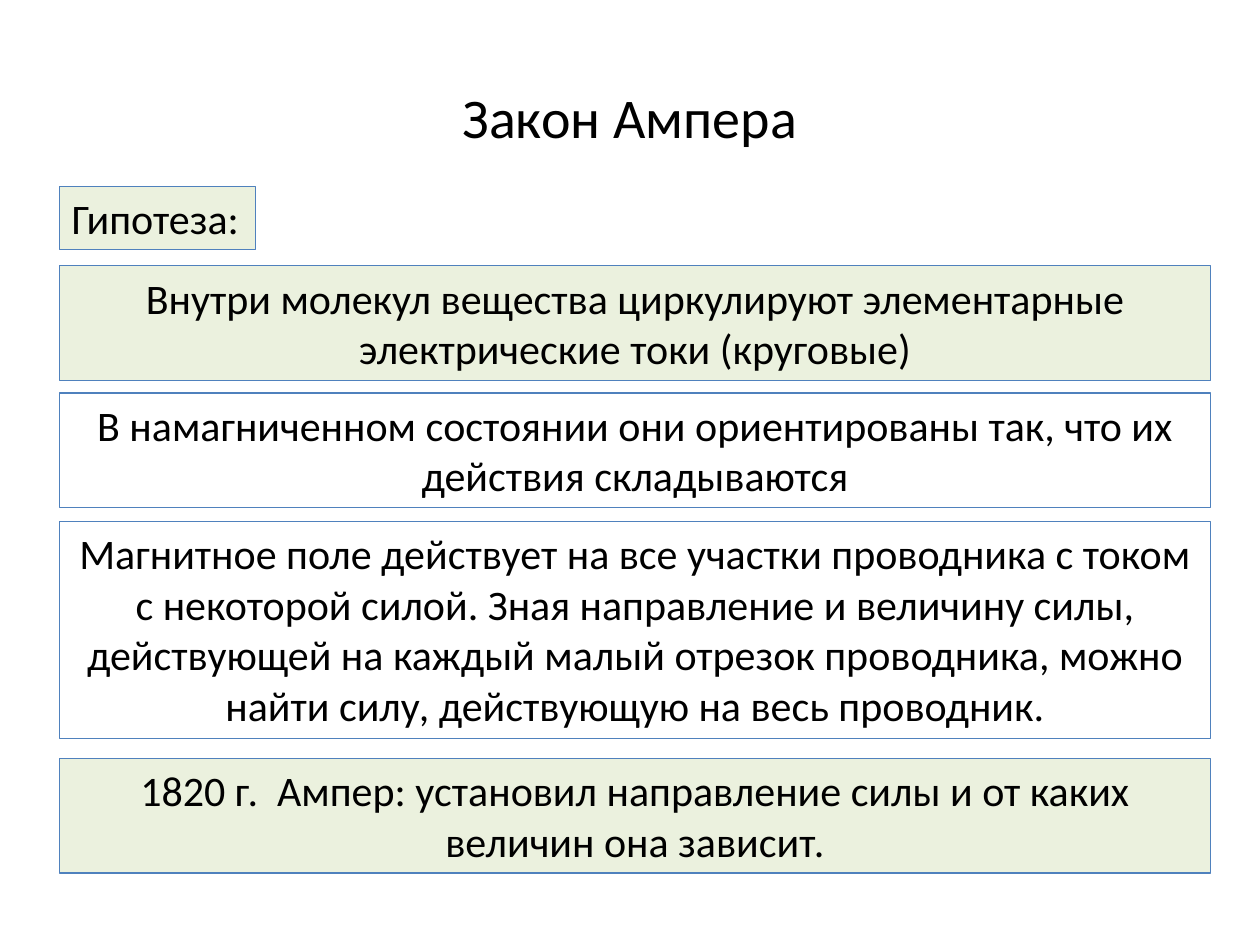
from pptx import Presentation
from pptx.dml.color import RGBColor
from pptx.enum.text import MSO_ANCHOR, MSO_AUTO_SIZE, PP_ALIGN
from pptx.util import Inches, Pt

LEFT, CENTER = PP_ALIGN.LEFT, PP_ALIGN.CENTER
MIDDLE, TOP = MSO_ANCHOR.MIDDLE, MSO_ANCHOR.TOP
GROW = MSO_AUTO_SIZE.SHAPE_TO_FIT_TEXT

BLACK = RGBColor(0x00, 0x00, 0x00)
BLUE = RGBColor(0x4F, 0x81, 0xBD)
GREEN = RGBColor(0xEB, 0xF1, 0xDE)

FONT = "Calibri"
TITLE_ONLY = 5
MARGIN, FULL_WIDTH, LABEL_WIDTH = 0.47, 9.14, 1.56

# top, height, width, fill, alignment, text
STATEMENTS = [
    (1.48, 0.5, LABEL_WIDTH, GREEN, LEFT, "Гипотеза:"),
    (2.11, 0.91, FULL_WIDTH, GREEN, CENTER,
     "Внутри молекул вещества циркулируют элементарные электрические токи (круговые)"),
    (3.12, 0.91, FULL_WIDTH, None, CENTER,
     "В намагниченном состоянии они ориентированы так, что их действия складываются"),
    (4.14, 1.72, FULL_WIDTH, None, CENTER,
     "Магнитное поле действует на все участки проводника с током с некоторой силой. "
     "Зная направление и величину силы, действующей на каждый малый отрезок "
     "проводника, можно найти силу, действующую на весь проводник."),
    (6.02, 0.91, FULL_WIDTH, GREEN, CENTER,
     "1820 г.  Ампер: установил направление силы и от каких величин она зависит."),
]


def write(frame, text, size=24, align=CENTER, anchor=TOP):
    frame.word_wrap = True
    frame.vertical_anchor = anchor
    para = frame.paragraphs[0]
    para.alignment = align
    span = para.add_run()
    span.text = text
    span.font.name = FONT
    span.font.size = Pt(size)
    span.font.color.rgb = BLACK


def place_title(page, text, left, top, width, height):
    title = page.shapes.title
    title.left, title.top = Inches(left), Inches(top)
    title.width, title.height = Inches(width), Inches(height)
    write(title.text_frame, text, size=32, anchor=MIDDLE)


def add_statement(page, text, left, top, width, height, fill, align):
    """Add an outlined text box, filled when a colour is given."""
    box = page.shapes.add_textbox(Inches(left), Inches(top), Inches(width), Inches(height))
    if fill is not None:
        box.fill.solid()
        box.fill.fore_color.rgb = fill
    box.line.color.rgb = BLUE
    box.line.width = Pt(0.75)
    write(box.text_frame, text, align=align)
    box.text_frame.auto_size = GROW


def main():
    deck = Presentation()
    deck.slide_width, deck.slide_height = Inches(10), Inches(7.5)
    page = deck.slides.add_slide(deck.slide_layouts[TITLE_ONLY])
    place_title(page, "Закон Ампера", 0.5, 0.3, 9, 1.25)
    for top, height, width, fill, align, text in STATEMENTS:
        add_statement(page, text, MARGIN, top, width, height, fill, align)
    deck.save("out.pptx")


if __name__ == "__main__":
    main()
